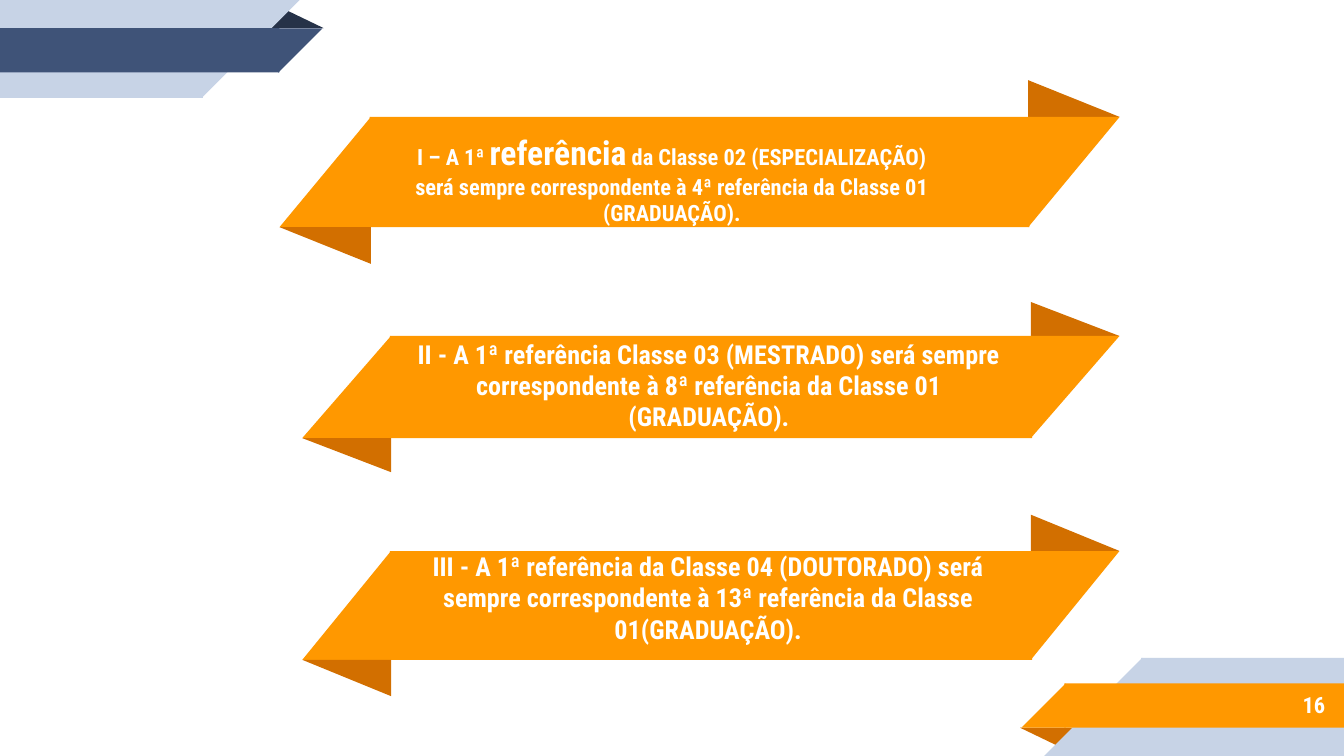
import pptx
import pptx.util
import pptx.dml.color
import pptx.enum.shapes
import pptx.enum.text

Inches = pptx.util.Inches
KIND = pptx.enum.shapes.MSO_SHAPE
ALIGN = pptx.enum.text.PP_ALIGN

WIDTH = 10
HEIGHT = WIDTH * 9 / 16
RIGHT = 8.33
FONT = "Roboto Condensed"
COLORS = {
    "navy": "3F5378", "dark": "263248", "pale": "C7D3E6",
    "orange": "FF9800", "rust": "D26F00", "white": "FFFFFF",
}
RIBBONS = [
    {"left": 2.08, "top": 0.87, "fold": 0.68, "high": 0.82,
     "box": (2.86, 0.88, 4.28, 0.91),
     "runs": [("I – A 1ª ", 12), ("referência", 18),
              (" da Classe 02 (ESPECIALIZAÇÃO) será sempre correspondente "
               "à 4ª referência da Classe 01 (GRADUAÇÃO).", 12)]},
    {"left": 2.25, "top": 2.5, "fold": 0.66, "high": 0.76,
     "box": (2.9, 2.41, 4.75, 0.91),
     "runs": [("II - A 1ª referência Classe 03 (MESTRADO) será sempre "
               "correspondente à 8ª referência da Classe 01 (GRADUAÇÃO).", 14)]},
    {"left": 2.25, "top": 4.1, "fold": 0.66, "high": 0.81,
     "box": (2.86, 4.04, 4.82, 0.81),
     "runs": [("III - A 1ª referência da Classe 04 (DOUTORADO) será sempre "
               "correspondente à 13ª referência da Classe 01(GRADUAÇÃO).", 14)]},
]
CORNER = [
    (KIND.ISOSCELES_TRIANGLE, (1.98, 0.07, 0.43, 0.14), "fold"),
    (KIND.RECTANGLE, (0, 0, 1.51, 0.73), "back"),
    (KIND.RIGHT_TRIANGLE, (1.5, 0, 0.73, 0.73), "back"),
    (KIND.RECTANGLE, (0, 0.21, 2.08, 0.33), "band"),
    (KIND.RIGHT_TRIANGLE, (2.07, 0.21, 0.33, 0.33), "band"),
]
THEMES = [
    (False, {"fold": "dark", "back": "pale", "band": "navy"}),
    (True, {"fold": "rust", "back": "pale", "band": "orange"}),
]
NUMBER = ("16", 12)


def color(name):
    return pptx.dml.color.RGBColor.from_string(COLORS[name])


def draw(slide, kind, box, fill, turn=False, skew=None):
    shape = slide.shapes.add_shape(kind, *map(Inches, box))
    shape.shadow.inherit = False
    shape.fill.solid()
    shape.fill.fore_color.rgb = color(fill)
    shape.line.fill.background()
    if turn:
        shape.rotation = 180
    if skew is not None:
        shape.adjustments[0] = skew
    if kind == KIND.RIGHT_TRIANGLE:
        shape._element.spPr.xfrm.set("flipH", "1")


def draw_corner(slide, turn, theme):
    for kind, box, part in CORNER:
        left, top, wide, high = box
        if turn:
            box = (WIDTH - left - wide, HEIGHT - top - high, wide, high)
        fold = kind == KIND.ISOSCELES_TRIANGLE
        draw(slide, kind, box, theme[part], turn == fold and kind != KIND.RECTANGLE,
             0.324 if fold else None)


def draw_ribbon(slide, left, top, fold, high):
    end = RIGHT - fold
    inner = left + fold - 0.01
    flap = high / 3
    draw(slide, KIND.ISOSCELES_TRIANGLE, (end, top - flap, fold, flap), "rust", skew=0)
    draw(slide, KIND.RECTANGLE, (inner, top, end - inner + 0.01, high), "orange")
    draw(slide, KIND.RIGHT_TRIANGLE, (end, top, fold, high), "orange", True)
    draw(slide, KIND.RIGHT_TRIANGLE, (left, top, fold, high), "orange")
    draw(slide, KIND.ISOSCELES_TRIANGLE, (left, top + high, fold, flap), "rust", True, 0)


def write(shape, box, runs, align):
    shape.left, shape.top, shape.width, shape.height = map(Inches, box)
    frame = shape.text_frame
    frame.word_wrap = True
    frame.auto_size = pptx.enum.text.MSO_AUTO_SIZE.NONE
    frame.vertical_anchor = pptx.enum.text.MSO_ANCHOR.MIDDLE
    frame.margin_left = frame.margin_right = Inches(0.1)
    frame.margin_top = frame.margin_bottom = Inches(0.1)
    para = frame.paragraphs[0]
    para.alignment = align
    for text, size in runs:
        run = para.add_run()
        run.text = text
        run.font.size = pptx.util.Pt(size)
        run.font.name = FONT
        run.font.bold = True
        run.font.color.rgb = color("white")


def main():
    deck = pptx.Presentation()
    deck.slide_width, deck.slide_height = Inches(WIDTH), Inches(HEIGHT)
    slide = deck.slides.add_slide(deck.slide_layouts[5])
    title = slide.shapes.title

    for turn, theme in THEMES:
        draw_corner(slide, turn, theme)
    for item in RIBBONS:
        draw_ribbon(slide, item["left"], item["top"], item["fold"], item["high"])

    slide.shapes._spTree.append(title._element)
    for index, item in enumerate(RIBBONS):
        shape = slide.shapes.add_textbox(0, 0, 0, 0) if index else title
        write(shape, item["box"], item["runs"], ALIGN.CENTER)
    write(slide.shapes.add_textbox(0, 0, 0, 0), (8.33, 5.07, 1.63, 0.35),
          [NUMBER], ALIGN.RIGHT)

    deck.save("out.pptx")


if __name__ == "__main__":
    main()
